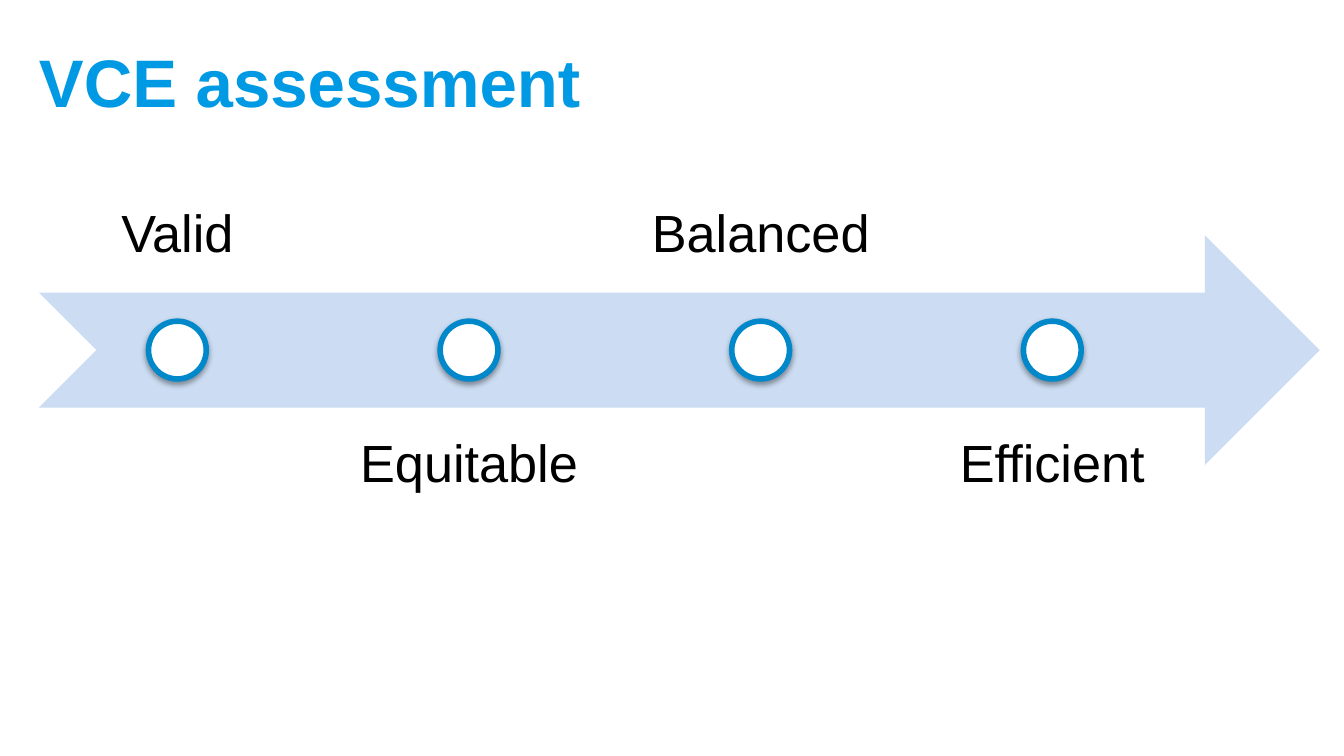
from lxml import etree
from pptx import Presentation
from pptx.dml.color import RGBColor
from pptx.enum import shapes, text
from pptx.oxml import ns
from pptx.util import Inches, Pt

TITLE = RGBColor(0x00, 0x99, 0xE3)
ARROW = RGBColor(0xCC, 0xDD, 0xF3)
RING = RGBColor(0x00, 0x88, 0xCA)
WHITE = RGBColor(0xFF, 0xFF, 0xFF)
BLACK = RGBColor(0x00, 0x00, 0x00)


def write(frame, words, size, color, bold=False):
    run = frame.paragraphs[0].add_run()
    run.text = words
    run.font.name = "Arial"
    run.font.size = Pt(size)
    run.font.bold = bold
    run.font.color.rgb = color


def shade(shape):
    """Give the shape a soft shadow straight below it."""
    shape.shadow.inherit = False
    effects = shape._element.spPr.find(ns.qn("a:effectLst"))
    outer = etree.SubElement(effects, ns.qn("a:outerShdw"), blurRad=str(Pt(3.1)),
                             dist=str(Pt(1.6)), dir="5400000", rotWithShape="0")
    color = etree.SubElement(outer, ns.qn("a:srgbClr"), val="000000")
    etree.SubElement(color, ns.qn("a:alpha"), val="38000")


# A 16:9 slide
deck = Presentation()
deck.slide_width = Inches(10)
deck.slide_height = Inches(10 * 9 / 16)
slide = deck.slides.add_slide(deck.slide_layouts[5])

# Title
title = slide.shapes.title
title.left, title.top = Inches(0.19), Inches(0.13)
title.width, title.height = Inches(9.53), Inches(0.94)
frame = title.text_frame
frame.vertical_anchor = text.MSO_ANCHOR.MIDDLE
frame.paragraphs[0].alignment = text.PP_ALIGN.LEFT
write(frame, "VCE assessment", 36, TITLE, bold=True)

# Timeline arrow
left, top, high = 0.29, 1.75, 1.71
arrow = slide.shapes.add_shape(shapes.MSO_SHAPE.NOTCHED_RIGHT_ARROW, Inches(left),
                               Inches(top), Inches(9.53), Inches(high))
arrow.shadow.inherit = False
arrow.fill.solid()
arrow.fill.fore_color.rgb = ARROW
arrow.line.fill.background()

# Principles: labels alternate above and below, each with a dot on the arrow
wide, step, dot = 2.06, 2.17, 0.43
for i, word in enumerate(["Valid", "Equitable", "Balanced", "Efficient"]):
    x = left + i * step
    above = i % 2 == 0
    label = slide.shapes.add_textbox(Inches(x), Inches(0.46 if above else 3.04),
                                     Inches(wide), Inches(high))
    frame = label.text_frame
    frame.word_wrap = True
    frame.margin_left = frame.margin_right = Inches(0.22)
    frame.margin_top = frame.margin_bottom = Inches(0.22)
    frame.vertical_anchor = text.MSO_ANCHOR.BOTTOM if above else text.MSO_ANCHOR.TOP
    frame.paragraphs[0].alignment = text.PP_ALIGN.CENTER
    frame.paragraphs[0].line_spacing = 0.9
    write(frame, word, 28, BLACK)

    mark = slide.shapes.add_shape(shapes.MSO_SHAPE.OVAL, Inches(x + (wide - dot) / 2),
                                  Inches(top + (high - dot) / 2), Inches(dot), Inches(dot))
    mark.fill.solid()
    mark.fill.fore_color.rgb = WHITE
    mark.line.color.rgb = RING
    mark.line.width = Pt(3)
    shade(mark)

deck.save("out.pptx")
